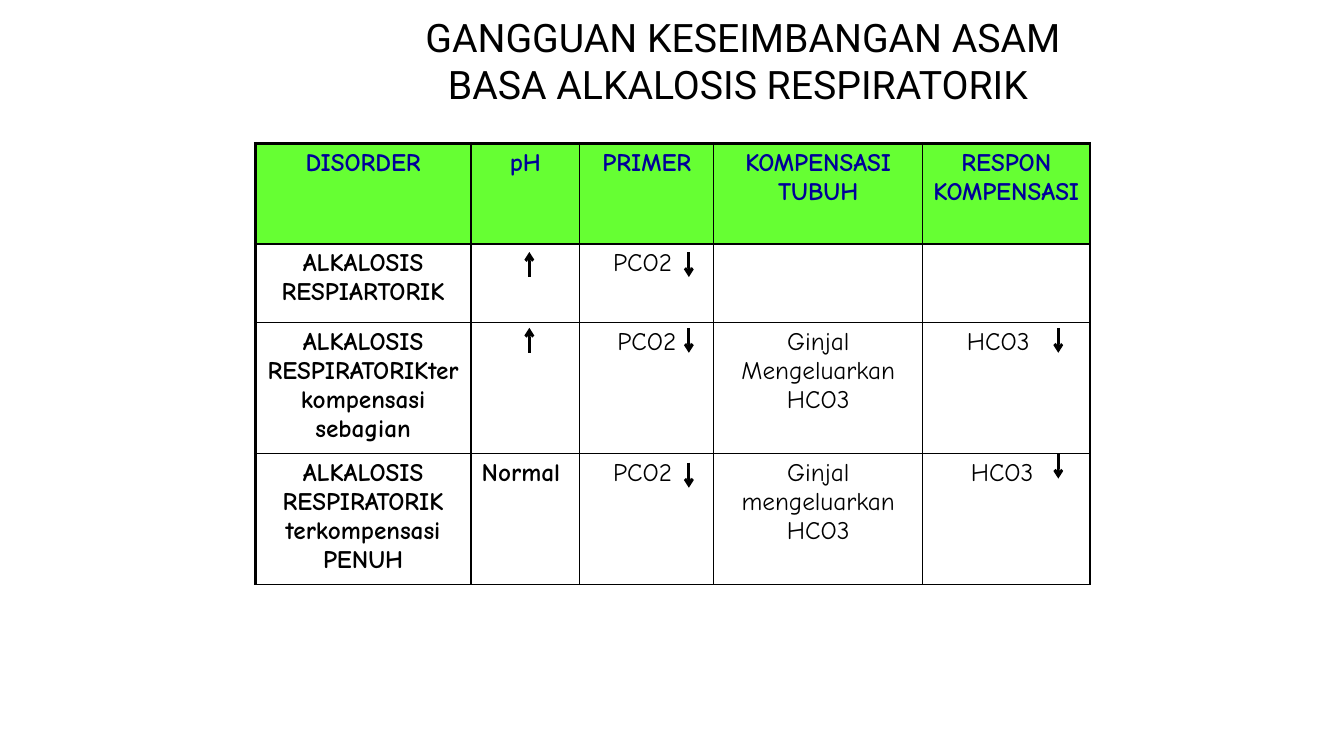
"""Build the slide on respiratory alkalosis with its table and arrows."""
from lxml.etree import SubElement as Sub
from pptx import Presentation
from pptx.dml.color import RGBColor
from pptx.enum.shapes import MSO_CONNECTOR as Link
from pptx.enum.text import MSO_ANCHOR as Anchor, MSO_AUTO_SIZE as Auto, PP_ALIGN as Align
from pptx.oxml.ns import qn
from pptx.util import Cm, Pt

TITLE = "GANGGUAN KESEIMBANGAN ASAM BASA ALKALOSIS RESPIRATORIK "
ROWS = [
    ("DISORDER", "pH", "PRIMER", "KOMPENSASI TUBUH", "RESPON KOMPENSASI"),
    ("ALKALOSIS RESPIARTORIK", "", "PCO2 ", "", ""),
    ("ALKALOSIS RESPIRATORIKterkompensasi sebagian", "", "PCO2",
     "Ginjal Mengeluarkan HCO3", "HCO3 "),
    ("ALKALOSIS RESPIRATORIK terkompensasi PENUH", "Normal ", "PCO2 ",
     "Ginjal mengeluarkan HCO3", "HCO3 "),
]
WIDTHS = (5.44, 2.74, 3.38, 5.26, 4.22)
HEIGHTS = (2.54, 1.98, 3.3, 3.3)
LEFT, TOP = 6.43, 3.61
UP = [(13.34, 6.35), (13.34, 8.26)]
DOWN = [(17.36, 6.35), (17.36, 8.26), (17.36, 11.66), (26.67, 11.43), (26.67, 8.26)]
LONG = 0.63
BLACK = RGBColor(0, 0, 0)
WHITE = RGBColor(255, 255, 255)
GREEN = RGBColor(0x66, 0xFF, 0x33)
NAVY = RGBColor(0, 0, 0x99)


def style(para, face, size, color, bold=False):
    """Centre a paragraph and set its font."""
    para.alignment = Align.CENTER
    for run in para.runs:
        font = run.font
        font.name, font.size, font.bold = face, Pt(size), bold
        font.color.rgb = color


def border(cell, thick):
    """Draw four black borders, heavy on the given sides."""
    props = cell._tc.get_or_add_tcPr()
    for side in "LRTB":
        width = Pt(2.25 if side in thick else 1)
        line = Sub(props, qn("a:ln" + side), w=str(width))
        Sub(Sub(line, qn("a:solidFill")), qn("a:srgbClr"), val=str(BLACK))


def add_grid(slide):
    """Add the table of disorders."""
    frame = slide.shapes.add_table(len(ROWS), len(WIDTHS), Cm(LEFT), Cm(TOP),
                                   Cm(sum(WIDTHS)), Cm(sum(HEIGHTS)))
    grid = frame.table
    for col, width in zip(grid.columns, WIDTHS):
        col.width = Cm(width)
    for row, height in zip(grid.rows, HEIGHTS):
        row.height = Cm(height)
    last = len(WIDTHS) - 1
    for r, texts in enumerate(ROWS):
        for c, text in enumerate(texts):
            cell = grid.cell(r, c)
            cell.text_frame.text = text
            style(cell.text_frame.paragraphs[0], "Comic Neue", 18,
                  BLACK if r else NAVY, r == 0 or c < 2)
            border(cell, ("T" if r == 0 else "") + {0: "L", last: "R"}.get(c, ""))
            cell.fill.solid()
            cell.fill.fore_color.rgb = WHITE if r else GREEN
    grid.cell(2, last).margin_right = Cm(0.45)


def add_arrow(slide, x, start, end):
    """Add a vertical arrow with its head at the end."""
    arrow = slide.shapes.add_connector(Link.STRAIGHT, Cm(x), Cm(start), Cm(x), Cm(end))
    arrow.line.color.rgb = BLACK
    arrow.line.width = Pt(2)
    Sub(arrow.line._get_or_add_ln(), qn("a:tailEnd"), type="arrow")
    Sub(arrow._element.spPr, qn("a:effectLst"))


def main():
    """Make and save the deck."""
    deck = Presentation()
    deck.slide_width, deck.slide_height = Cm(33.87), Cm(19.05)
    slide = deck.slides.add_slide(deck.slide_layouts[5])
    title = slide.shapes.title
    title.left, title.top, title.width, title.height = Cm(9.73), Cm(0.2), Cm(17.98), Cm(3.18)
    frame = title.text_frame
    frame.text = TITLE
    frame.word_wrap = True
    frame.auto_size = Auto.NONE
    frame.vertical_anchor = Anchor.TOP
    style(frame.paragraphs[0], "Roboto", 28, BLACK)
    add_grid(slide)
    for x, y in UP:
        add_arrow(slide, x, y + LONG, y)
    for x, y in DOWN:
        add_arrow(slide, x, y, y + LONG)
    deck.save("out.pptx")


if __name__ == "__main__":
    main()
